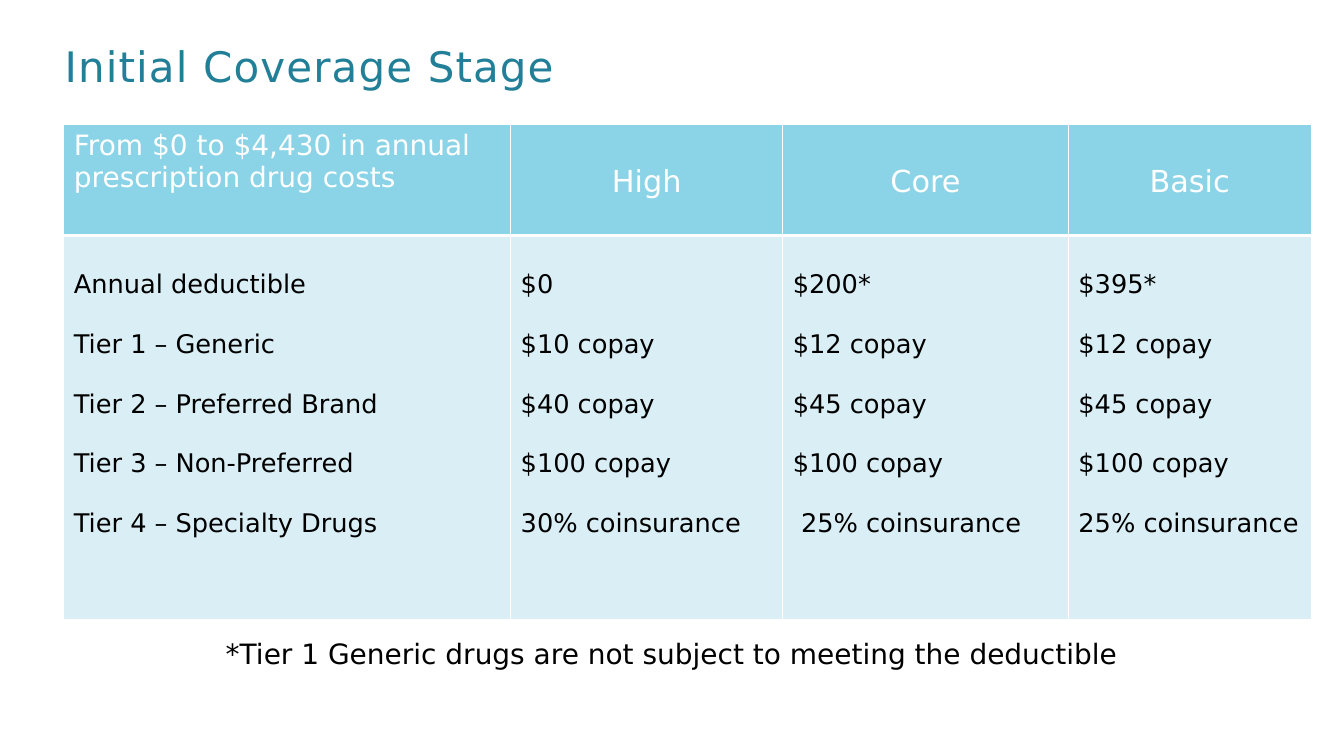
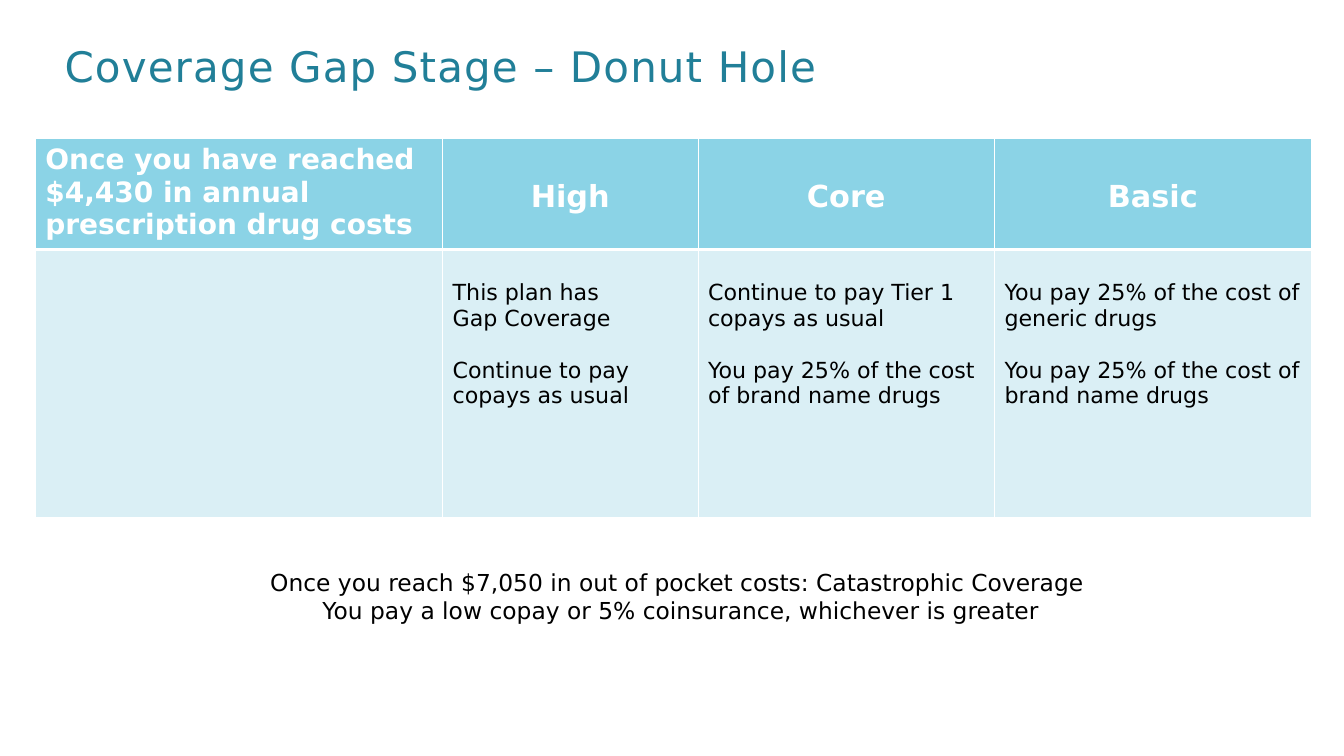
from lxml.etree import SubElement
from pptx import Presentation
from pptx.dml.color import RGBColor
from pptx.enum.text import MSO_ANCHOR, PP_ALIGN
from pptx.oxml.ns import qn
from pptx.util import Inches, Pt

COLORS = {"title": "217F98", "head": "8BD3E6", "body": "DAEFF5",
          "white": "FFFFFF", "text": "000000"}
FONT = "DejaVu Sans"
LINE = 1.164  # line height of the font, relative to its size
SIZES = {"title": 36, "lead": 24, "plan": 26}
TITLE_BOX = (0.67, 0.16, 13.85, 1.32)
PAD_X, PAD_Y = Inches(0.12), Inches(0.06)
RULES = {"head": 3, "body": 1}  # width of the line below each row
PLANS = ["High", "Core", "Basic"]


def color(name):
    return RGBColor.from_string(COLORS[name])


def style(para, size, shade, bold=False, align=PP_ALIGN.LEFT):
    para.alignment = align
    font = para.font
    font.name, font.size, font.bold = FONT, Pt(size), bold
    font.color.rgb = color(shade)


def add_box(slide, box):
    frame = slide.shapes.add_textbox(*map(Inches, box)).text_frame
    frame.word_wrap = True
    return frame


def add_title(slide, text):
    frame = add_box(slide, TITLE_BOX)
    frame.vertical_anchor = MSO_ANCHOR.MIDDLE
    para = frame.paragraphs[0]
    para.line_spacing = 0.9
    run = para.add_run()
    run.text = text
    run._r.get_or_add_rPr().set("spc", "100")
    style(para, SIZES["title"], "title")


def add_note(slide, box, lines, size):
    frame = add_box(slide, box)
    frame.text = "\n".join(lines)
    for para in frame.paragraphs:
        style(para, size, "text", align=PP_ALIGN.CENTER)


def paint_cell(cell, row):
    """Give a cell its white borders, then the fill of its row."""
    props = cell._tc.get_or_add_tcPr()
    for side, width in {"L": 1, "R": 1, "T": 1, "B": RULES[row]}.items():
        line = SubElement(props, qn(f"a:ln{side}"), w=str(Pt(width)))
        fill = SubElement(line, qn("a:solidFill"))
        SubElement(fill, qn("a:srgbClr"), val=COLORS["white"])
    cell.fill.solid()
    cell.fill.fore_color.rgb = color(row)


def write_cell(cell, items, size, shade, gap=True, **look):
    """Write one paragraph per item; gap leaves a line free above each."""
    space = Pt(size * LINE) if gap else 0
    cell.margin_left = cell.margin_right = PAD_X
    cell.margin_top, cell.margin_bottom = PAD_Y + space, PAD_Y
    frame = cell.text_frame
    frame.text = "\n".join(items)
    for para in frame.paragraphs:
        style(para, size, shade, **look)
    for para in frame.paragraphs[1:]:
        para.space_before = space


def add_plans(slide, spot, widths, heights, lead, columns, size, bold=False):
    """Table with a header row and one tall body row."""
    box = map(Inches, (*spot, sum(widths), sum(heights)))
    table = slide.shapes.add_table(len(heights), len(widths), *box).table
    table.horz_banding = False
    for column, width in zip(table.columns, widths):
        column.width = Inches(width)
    for row, height, name in zip(table.rows, heights, ("head", "body")):
        row.height = Inches(height)
        for cell in row.cells:
            paint_cell(cell, name)

    first, *others = table.rows[0].cells
    write_cell(first, [lead], SIZES["lead"], "white", gap=False, bold=bold)
    for cell, plan in zip(others, PLANS):
        write_cell(cell, [plan], SIZES["plan"], "white", bold=bold,
                   align=PP_ALIGN.CENTER)
    for cell, items in zip(table.rows[1].cells, columns):
        write_cell(cell, items, size, "text")


def build_initial(slide):
    add_title(slide, "Initial Coverage Stage")
    columns = [
        ["Annual deductible", "Tier 1 – Generic", "Tier 2 – Preferred Brand",
         "Tier 3 – Non-Preferred", "Tier 4 – Specialty Drugs"],
        ["$0", "$10 copay", "$40 copay", "$100 copay", "30% coinsurance"],
        ["$200*", "$12 copay", "$45 copay", "$100 copay", " 25% coinsurance"],
        ["$395*", "$12 copay", "$45 copay", "$100 copay", "25% coinsurance"],
    ]
    add_plans(slide, spot=(0.76, 1.48), widths=(5.32, 3.24, 3.4, 2.89),
              heights=(1.32, 4.58), columns=columns, size=22,
              lead="From $0 to $4,430 in annual prescription drug costs")
    add_note(slide, (1.25, 7.53, 13.49, 0.5),
             ["*Tier 1 Generic drugs are not subject to meeting the deductible"],
             size=24)


def build_gap(slide):
    add_title(slide, "Coverage Gap Stage – Donut Hole")
    generic, brand = (f"You pay 25% of the cost of {kind} drugs"
                      for kind in ("generic", "brand name"))
    columns = [
        [],
        ["This plan has\vGap Coverage", "Continue to pay copays as usual"],
        ["Continue to pay Tier 1 copays as usual", brand],
        [generic, brand],
    ]
    add_plans(slide, spot=(0.42, 1.65), widths=(4.85, 3.04, 3.53, 3.77),
              heights=(1.24, 3.19), columns=columns, size=19, bold=True,
              lead="Once you have reached $4,430 in annual prescription drug costs")
    add_note(slide, (0.78, 6.72, 14.65, 1.21),
             ["Once you reach $7,050 in out of pocket costs: Catastrophic Coverage ",
              "You pay a low copay or 5% coinsurance, whichever is greater"],
             size=20)


def main():
    deck = Presentation()
    deck.slide_width, deck.slide_height = Inches(16), Inches(9)
    for build in (build_initial, build_gap):
        build(deck.slides.add_slide(deck.slide_layouts[6]))
    deck.save("out.pptx")


if __name__ == "__main__":
    main()
